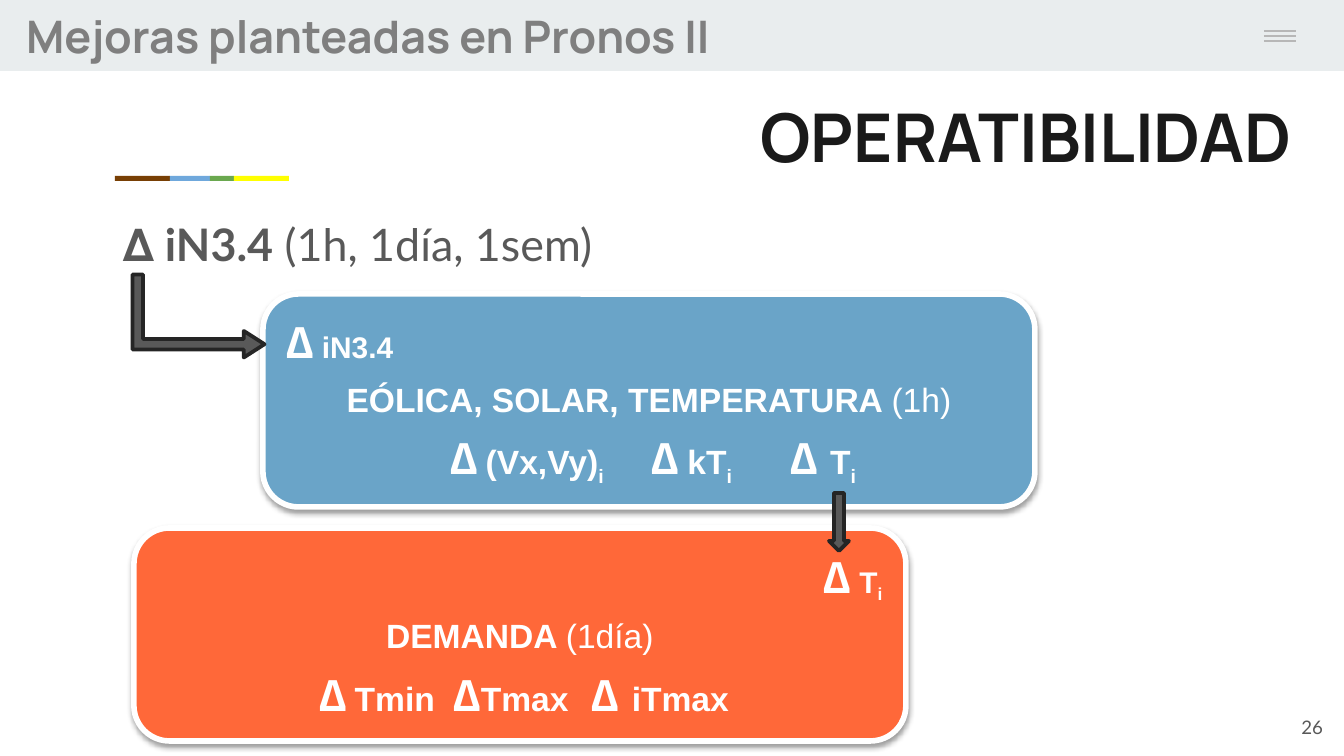
from pptx import Presentation
from pptx.dml.color import RGBColor
from pptx.enum.shapes import MSO_CONNECTOR, MSO_SHAPE
from pptx.enum.text import MSO_ANCHOR, MSO_AUTO_SIZE, PP_ALIGN
from pptx.oxml.ns import qn
from pptx.util import Emu, Pt
from lxml.etree import SubElement

# Content: each run is (text, size, style); styles are bold, plain, sub
HEADER = [("Mejoras planteadas en Pronos II", 24, "bold")]
TITLE = [("OPERATIBILIDAD", 36, "bold")]
PAGE_NUMBER = [("26", 10, "plain")]
INDEX_LEAD = [("∆", 24, "bold")]
INDEX_REST = [(" iN3.4", 24, "bold"), (" (1h, 1día, 1sem)", 24, "plain")]
DELTA, SPACE, SUB_I = ("∆", 24, "bold"), (" ", 16, "bold"), ("i", 18, "sub")
LEFT, CENTER, RIGHT = PP_ALIGN.LEFT, PP_ALIGN.CENTER, PP_ALIGN.RIGHT

STAGES = [
    {"box": (263, 294, 772, 213), "fill": "6AA4C8", "rows": [
        (LEFT, [DELTA, (" iN3.4", 16, "bold")]),
        (CENTER, [("EÓLICA, SOLAR, TEMPERATURA ", 18, "bold"), ("(1h)", 18, "plain")]),
        (CENTER, [SPACE, DELTA, SPACE, ("(Vx,Vy)", 18, "bold"), SUB_I,
                  ("\t ", 16, "bold"), DELTA, SPACE, ("kT", 18, "bold"), SUB_I,
                  ("\t", 16, "bold"), (" ∆ ", 24, "bold"), ("T", 18, "bold"), SUB_I]),
    ]},
    {"box": (134, 528, 772, 213), "fill": "FF6839", "rows": [
        (RIGHT, [DELTA, (" T", 16, "bold"), ("i", 16, "sub")]),
        (CENTER, [("DEMANDA ", 18, "bold"), ("(1día)", 18, "plain")]),
        (CENTER, [SPACE, DELTA, SPACE, ("Tmin", 18, "bold"), ("\t ", 16, "bold"),
                  DELTA, ("Tmax", 18, "bold"), ("\t", 16, "bold"),
                  (" ∆ ", 24, "bold"), ("iTmax", 18, "bold")]),
    ]},
]
ARROWS = [
    (MSO_SHAPE.BENT_UP_ARROW, (157, 250, 83, 132), 90, (0.125, 0.16, 0.25)),
    (MSO_SHAPE.DOWN_ARROW, (829, 493, 20, 58), 0, (0.5, 0.5)),
]
ACCENT_WIDTHS = [("783F04", 55), ("6FA8DC", 40), ("6AA84F", 24), ("FFFF00", 55)]


def px(n):
    return Emu(round(n * 914400 / 134.4))


def color(value):
    return RGBColor.from_string(value)


def add_block(kind, box, fill, line=None, width=0):
    block = slide.shapes.add_shape(kind, *map(px, box))
    block.shadow.inherit = False
    block.fill.solid()
    block.fill.fore_color.rgb = color(fill)
    if line:
        block.line.color.rgb = color(line)
        block.line.width = Pt(width)
    else:
        block.line.fill.background()
    return block


def set_frame(frame, anchor=MSO_ANCHOR.TOP, inset=13):
    frame.word_wrap = True
    frame.auto_size = MSO_AUTO_SIZE.NONE
    frame.vertical_anchor = anchor
    frame.margin_left = frame.margin_right = px(13)
    frame.margin_top = frame.margin_bottom = px(inset)


def write(paragraph, runs, font, ink, align=LEFT):
    paragraph.alignment = align
    paragraph.font.name = font
    paragraph.font.color.rgb = color(ink)
    for text, size, style in runs:
        run = paragraph.add_run()
        run.text = text
        run.font.name = font
        run.font.color.rgb = color(ink)
        run.font.size = Pt(size)
        run.font.bold = style != "plain"
        if style == "sub":
            run.font._element.set("baseline", "-25000")


def add_label(box, anchor=MSO_ANCHOR.TOP):
    label = slide.shapes.add_textbox(*map(px, box))
    set_frame(label.text_frame, anchor)
    return label.text_frame.paragraphs[0]


def add_soft_shadow(block):
    effects = block._element.spPr.find(qn("a:effectLst"))
    shadow = SubElement(effects, qn("a:outerShdw"), blurRad="40000", dist="20000",
                        dir="5400000", rotWithShape="0")
    ink = SubElement(shadow, qn("a:srgbClr"), val="000000")
    SubElement(ink, qn("a:alpha"), val="38000")


prs = Presentation()
prs.slide_width, prs.slide_height = px(1344), px(756)
slide = prs.slides.add_slide(prs.slide_layouts[5])

# Header band with menu lines
add_block(MSO_SHAPE.RECTANGLE, (0, 0, 1344, 71), "E9EDEE")
for y in (31, 36, 41):
    menu_line = slide.shapes.add_connector(
        MSO_CONNECTOR.STRAIGHT, px(1264), px(y), px(1296), px(y))
    menu_line.line.color.rgb = color("B7B7B7")
    menu_line.line.width = Pt(0.75)
    SubElement(menu_line._element.spPr, qn("a:effectLst"))
write(add_label((13, -4, 1227, 74)), HEADER, "Manrope", "7F7F7F")

# Accent bar
accent_x = 115
for fill, width in ACCENT_WIDTHS:
    add_block(MSO_SHAPE.RECTANGLE, (accent_x, 176, width, 5), fill)
    accent_x += width

# Title, page number and index line
title = slide.shapes.title
title.left, title.top, title.width, title.height = map(px, (108, 82, 1197, 112))
set_frame(title.text_frame)
write(title.text_frame.paragraphs[0], TITLE, "Manrope", "1A1A1A", RIGHT)
write(add_label((1255, 698, 81, 58), MSO_ANCHOR.MIDDLE), PAGE_NUMBER, "Lato", "595959", RIGHT)
index_line = add_label((110, 204, 1175, 90))
write(index_line, INDEX_LEAD, "Manrope", "595959")
write(index_line, INDEX_REST, "Lato", "595959")

# Stages
for stage in STAGES:
    panel = add_block(MSO_SHAPE.ROUNDED_RECTANGLE, stage["box"], stage["fill"], "FFFFFF", 3)
    add_soft_shadow(panel)
    frame = panel.text_frame
    set_frame(frame, MSO_ANCHOR.MIDDLE, 7)
    for i, (align, runs) in enumerate(stage["rows"]):
        row = frame.add_paragraph() if i else frame.paragraphs[0]
        if i:
            row.space_before = Pt(6)
        write(row, runs, "Arial", "FFFFFF", align)

# Arrows between stages
for kind, box, turn, adjustments in ARROWS:
    arrow = add_block(kind, box, "595959", "252525", 2)
    arrow.rotation = turn
    for i, value in enumerate(adjustments):
        arrow.adjustments[i] = value

prs.save("out.pptx")
